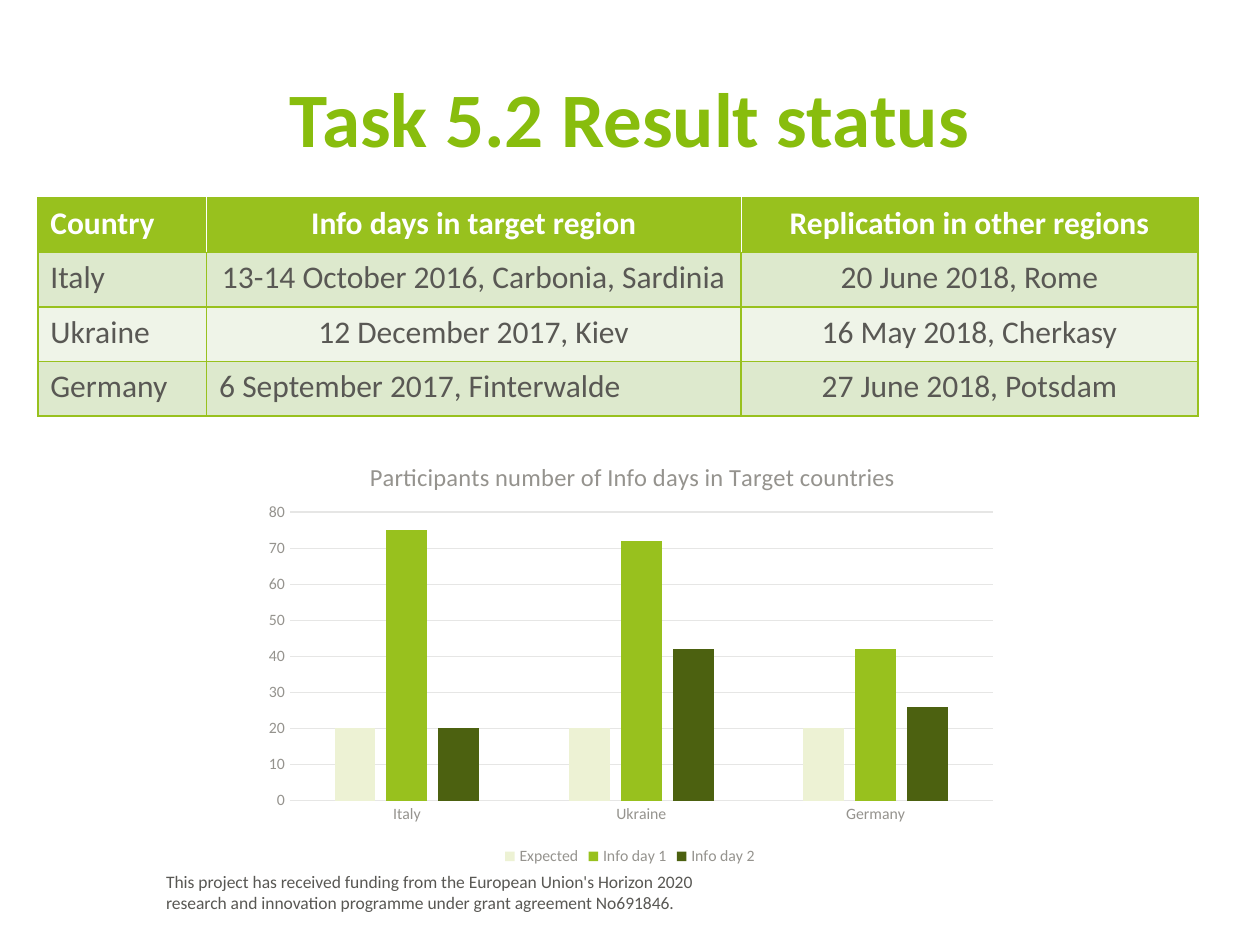
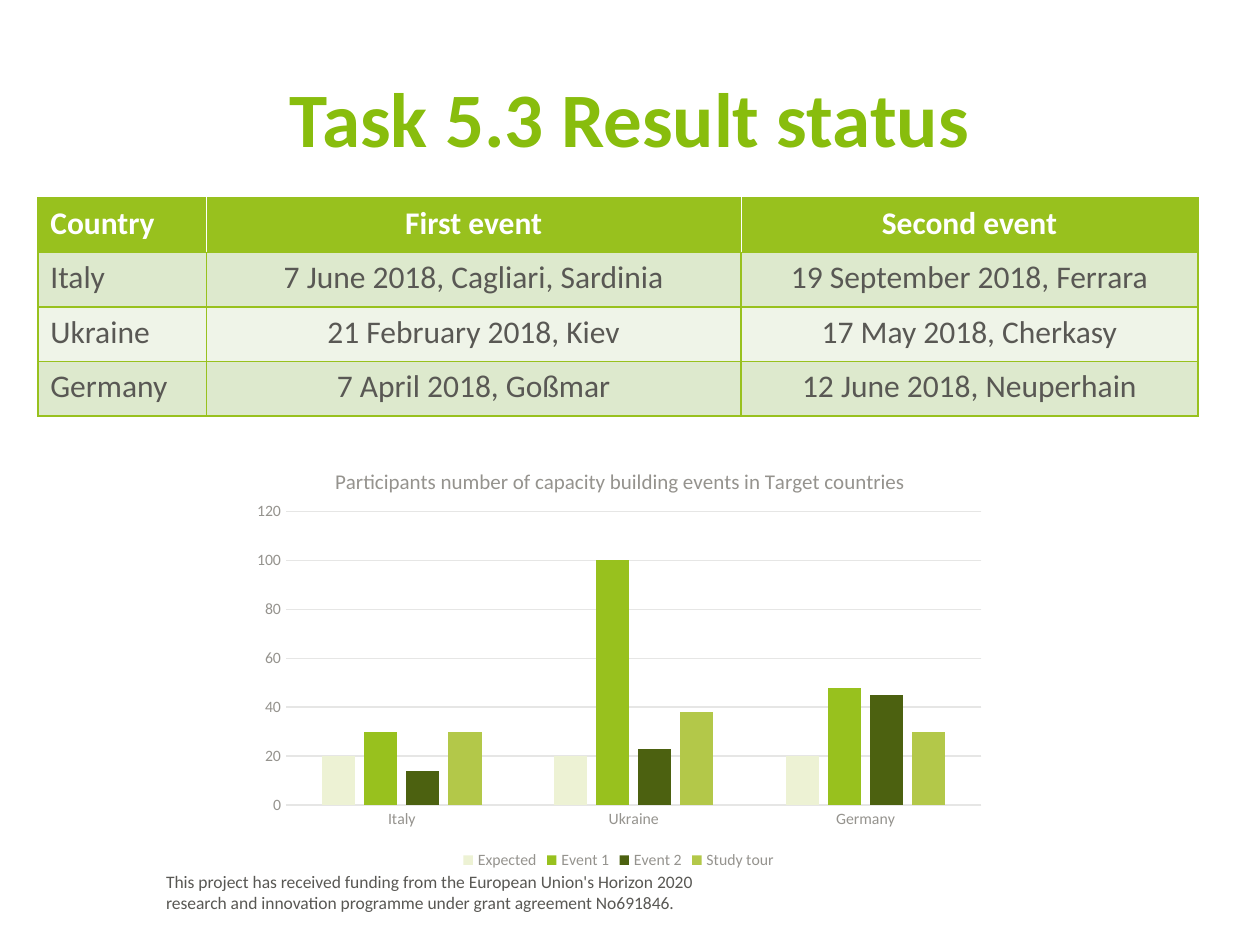
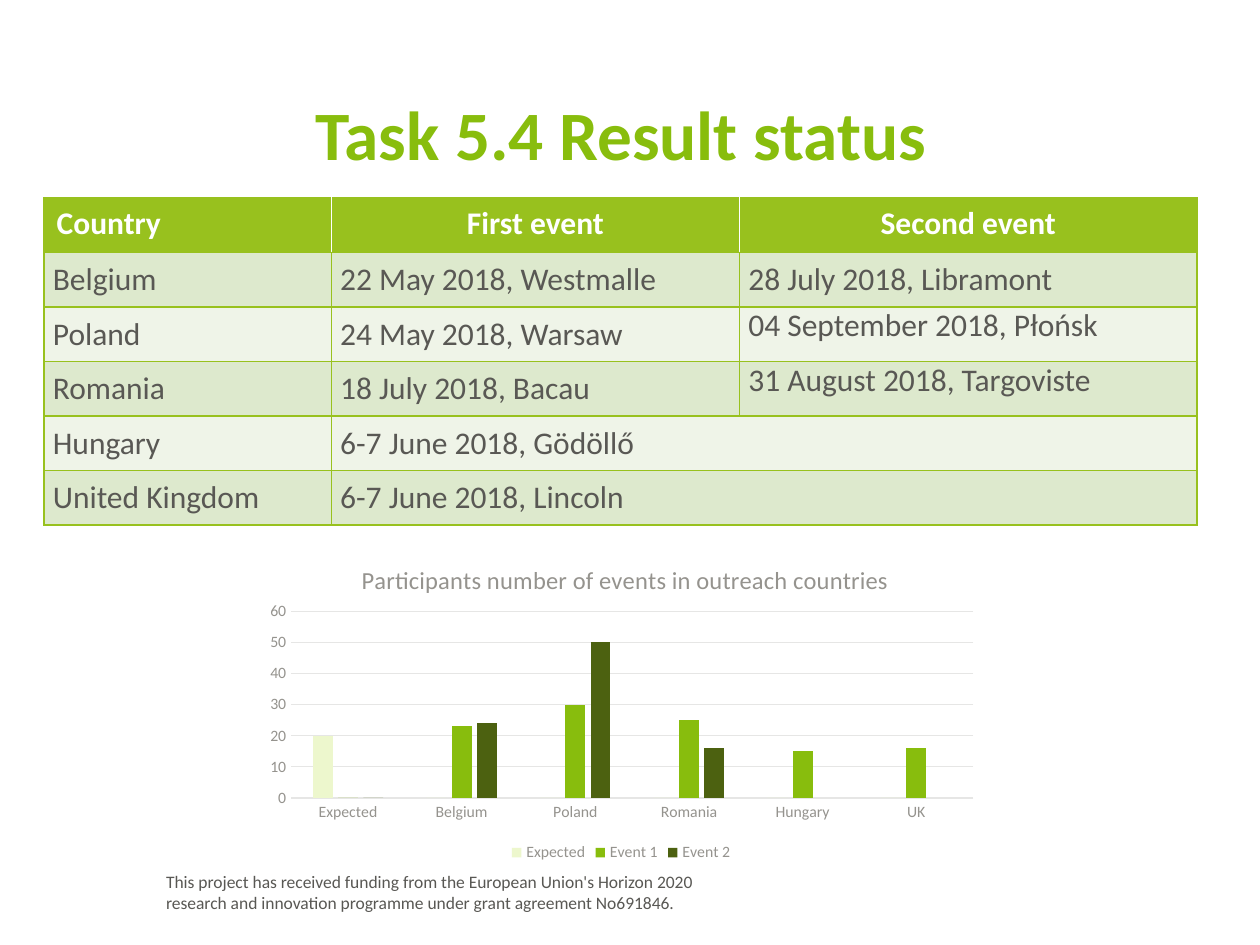
import pptx
import pptx.chart.data
import pptx.dml.color
import pptx.enum.chart
import pptx.enum.text
import pptx.oxml
import pptx.util
from pptx.oxml.ns import nsdecls

Inches = pptx.util.Inches
Pt = pptx.util.Pt
RGBColor = pptx.dml.color.RGBColor
Align = pptx.enum.text.PP_ALIGN
Anchor = pptx.enum.text.MSO_ANCHOR

FONT = "Calibri"
TITLE_GREEN = RGBColor(0x88, 0xBD, 0x0D)
GREEN = RGBColor(0x98, 0xC1, 0x1E)
DARK_GREEN = RGBColor(0x4C, 0x61, 0x10)
LIME = RGBColor(0xB3, 0xC8, 0x49)
PALE_GREEN = RGBColor(0xED, 0xF2, 0xD4)
PALE_LIME = RGBColor(0xED, 0xF7, 0xCD)
ODD_ROW = RGBColor(0xDD, 0xE9, 0xCD)
EVEN_ROW = RGBColor(0xEF, 0xF4, 0xE8)
TEXT = RGBColor(0x59, 0x58, 0x54)
CHART_TEXT = RGBColor(0x95, 0x93, 0x8E)
GRID = RGBColor(0xE6, 0xE6, 0xE5)
WHITE = RGBColor(0xFF, 0xFF, 0xFF)

ROW_HEIGHT = 2.6 / 6
FOOTER = [
    "This project has received funding from the European Union's Horizon 2020",
    "research and innovation programme under grant agreement No691846.",
]

# Content of each slide; boxes are left, top, width, height
TASKS = [
    dict(
        title="Task 5.2 Result status", title_at=(0.5, 0.3), title_size=44, title_bottom=0.05,
        table_left=0.3, columns=(1.34, 4.24, 3.63), compact=False,
        rows=[
            ("Country", "Info days in target region", "Replication in other regions"),
            ("Italy", "13-14 October 2016, Carbonia, Sardinia", "20 June 2018, Rome"),
            ("Ukraine", "12 December 2017, Kiev", "16 May 2018, Cherkasy"),
            ("Germany", "6 September 2017, Finterwalde", "27 June 2018, Potsdam"),
        ],
        left_cells={(3, 1)}, top_cells=set(),
        chart_title="Participants number of Info days in Target countries",
        chart_title_size=14, chart_title_at=(0.15, 0.05),
        chart_at=(2, 3.44, 6, 3.47), plot_at=(0.05, 0.18, 0.93, 0.66), scale=(80, 10),
        categories=["Italy", "Ukraine", "Germany"],
        series=[
            ("Expected", (20, 20, 20), PALE_GREEN),
            ("Info day 1", (75, 72, 42), GREEN),
            ("Info day 2", (20, 42, 26), DARK_GREEN),
        ],
    ),
    dict(
        title="Task 5.3 Result status", title_at=(0.5, 0.3), title_size=44, title_bottom=0.05,
        table_left=0.3, columns=(1.34, 4.24, 3.63), compact=False,
        rows=[
            ("Country", "First event", "Second event"),
            ("Italy", "7 June 2018, Cagliari, Sardinia", "19 September 2018, Ferrara"),
            ("Ukraine", "21 February 2018, Kiev", "17 May 2018, Cherkasy"),
            ("Germany", "7 April 2018, Goßmar", "12 June 2018, Neuperhain"),
        ],
        left_cells=set(), top_cells=set(),
        chart_title="Participants number of capacity building events in Target countries",
        chart_title_size=12, chart_title_at=(0.12, 0.05),
        chart_at=(1.91, 3.51, 6, 3.43), plot_at=(0.06, 0.16, 0.92, 0.68), scale=(120, 20),
        categories=["Italy", "Ukraine", "Germany"],
        series=[
            ("Expected", (20, 20, 20), PALE_GREEN),
            ("Event 1", (30, 100, 48), GREEN),
            ("Event 2", (14, 23, 45), DARK_GREEN),
            ("Study tour", (30, 38, 30), LIME),
        ],
    ),
    dict(
        title="Task 5.4 Result status", title_at=(0.43, 0.76), title_size=39.6, title_bottom=0.71,
        table_left=0.35, columns=(2.28, 3.24, 3.63), compact=True,
        rows=[
            ("Country", "First event", "Second event"),
            ("Belgium", "22 May 2018, Westmalle", "28 July 2018, Libramont"),
            ("Poland", "24 May 2018, Warsaw", "04 September 2018, Płońsk"),
            ("Romania", "18 July 2018, Bacau", "31 August 2018, Targoviste"),
            ("Hungary", "6-7 June 2018, Gödöllő"),
            ("United Kingdom", "6-7 June 2018, Lincoln"),
        ],
        left_cells=set(), top_cells={(2, 2), (3, 2)},
        chart_title="Participants number of events in outreach countries",
        chart_title_size=14, chart_title_at=(0.14, 0.06),
        chart_at=(2.02, 4.28, 5.82, 2.6), plot_at=(0.05, 0.22, 0.93, 0.57), scale=(60, 10),
        categories=["Expected", "Belgium", "Poland", "Romania", "Hungary", "UK"],
        series=[
            ("Expected", (20, 0, 0, 0, 0, 0), PALE_LIME),
            ("Event 1", (0, 23, 30, 25, 15, 16), TITLE_GREEN),
            ("Event 2", (0, 24, 50, 16, None, None), DARK_GREEN),
        ],
    ),
]


def style(font, size, color, bold=False):
    font.name = FONT
    font.size = Pt(size)
    font.bold = bold
    font.color.rgb = color


def set_layout(parent, box, target=""):
    """Place a chart part by fractions of the chart area."""
    for old in parent.xpath("c:layout"):
        parent.remove(old)
    values = "".join(f'<c:{key} val="{value}"/>' for key, value in zip("xywh", box))
    modes = '<c:xMode val="edge"/><c:yMode val="edge"/>'
    layout = pptx.oxml.parse_xml(
        f'<c:layout {nsdecls("c")}><c:manualLayout>{target}{modes}{values}</c:manualLayout></c:layout>')
    parent.insert(len(parent.xpath("c:tx")), layout)


deck = pptx.Presentation()
deck.slide_width, deck.slide_height = Inches(10), Inches(7.5)

for task in TASKS:
    slide = deck.slides.add_slide(deck.slide_layouts[6])

    # Funding note
    funding = slide.shapes.add_textbox(Inches(1.22), Inches(6.86), Inches(4.8), Inches(0.44)).text_frame
    funding.word_wrap = True
    funding.auto_size = pptx.enum.text.MSO_AUTO_SIZE.SHAPE_TO_FIT_TEXT
    for number, line in enumerate(FOOTER):
        paragraph = funding.add_paragraph() if number else funding.paragraphs[0]
        run = paragraph.add_run()
        run.text = line
        style(run.font, 10, TEXT)

    # Title
    left, top = task["title_at"]
    heading = slide.shapes.add_textbox(Inches(left), Inches(top), Inches(9), Inches(1.25)).text_frame
    heading.word_wrap = True
    heading.vertical_anchor = Anchor.MIDDLE
    heading.margin_bottom = Inches(task["title_bottom"])
    heading.paragraphs[0].alignment = Align.CENTER
    run = heading.paragraphs[0].add_run()
    run.text = task["title"]
    style(run.font, task["title_size"], TITLE_GREEN, True)

    # Event table
    rows, columns = task["rows"], task["columns"]
    events = slide.shapes.add_table(
        len(rows), len(columns), Inches(task["table_left"]), Inches(1.57),
        Inches(sum(columns)), Inches(ROW_HEIGHT * len(rows))).table
    for column, width in zip(events.columns, columns):
        column.width = Inches(width)
    last = len(columns) - 1
    for r, texts in enumerate(rows):
        events.rows[r].height = Inches(ROW_HEIGHT)
        for c in range(len(columns)):
            cell = events.cell(r, c)
            for side in "LRTB":
                inner = r == 0 and ((side == "L" and c > 0) or (side == "R" and c < last))
                color, width = (WHITE, 0.25) if inner else (GREEN, 1)
                cell._tc.get_or_add_tcPr().append(pptx.oxml.parse_xml(
                    f'<a:ln{side} {nsdecls("a")} w="{Pt(width)}"><a:solidFill>'
                    f'<a:srgbClr val="{color}"/></a:solidFill></a:ln{side}>'))
            cell.fill.solid()
            cell.fill.fore_color.rgb = GREEN if r == 0 else ODD_ROW if r % 2 else EVEN_ROW
            if c >= len(texts):
                continue
            compact = task["compact"] and r > 0
            if compact:
                cell.margin_left = cell.margin_right = Inches(0.07)
                cell.margin_top = cell.margin_bottom = 0
                cell.vertical_anchor = Anchor.TOP if (r, c) in task["top_cells"] else Anchor.MIDDLE
            paragraph = cell.text_frame.paragraphs[0]
            flush_left = c == 0 or compact or (r, c) in task["left_cells"]
            paragraph.alignment = Align.LEFT if flush_left else Align.CENTER
            run = paragraph.add_run()
            run.text = texts[c]
            style(run.font, 18, TEXT if r else WHITE, r == 0)
        if len(texts) < len(columns):
            events.cell(r, len(texts) - 1).merge(events.cell(r, last))

    # Participants chart
    data = pptx.chart.data.CategoryChartData()
    data.categories = task["categories"]
    for name, values, color in task["series"]:
        data.add_series(name, values)
    participants = slide.shapes.add_chart(
        pptx.enum.chart.XL_CHART_TYPE.COLUMN_CLUSTERED,
        *[Inches(length) for length in task["chart_at"]], data).chart
    style(participants.font, 10, TEXT)

    participants.has_title = True
    caption = participants.chart_title
    run = caption.text_frame.paragraphs[0].add_run()
    run.text = task["chart_title"]
    style(run.font, task["chart_title_size"], CHART_TEXT)
    caption.include_in_layout = False
    set_layout(participants.element.xpath("c:chart/c:title")[0], task["chart_title_at"])
    set_layout(participants.element.xpath("c:chart/c:plotArea")[0], task["plot_at"],
               '<c:layoutTarget val="inner"/>')

    columns_plot = participants.plots[0]
    columns_plot.vary_by_categories = False
    columns_plot.gap_width = 219
    columns_plot.overlap = -27
    for series, (name, values, color) in zip(columns_plot.series, task["series"]):
        series.format.fill.solid()
        series.format.fill.fore_color.rgb = color
        series.invert_if_negative = False

    countries, people = participants.category_axis, participants.value_axis
    for axis in (countries, people):
        axis.major_tick_mark = axis.minor_tick_mark = pptx.enum.chart.XL_TICK_MARK.NONE
        style(axis.tick_labels.font, 9, CHART_TEXT)
    people.minimum_scale = 0
    people.maximum_scale, people.major_unit = task["scale"]
    people.has_major_gridlines = True
    people.format.line.fill.background()
    for line in (countries.format.line, people.major_gridlines.format.line):
        line.color.rgb = GRID
        line.width = Pt(0.75)

    participants.has_legend = True
    participants.legend.position = pptx.enum.chart.XL_LEGEND_POSITION.BOTTOM
    participants.legend.include_in_layout = False
    style(participants.legend.font, 9, CHART_TEXT)

deck.save("out.pptx")
